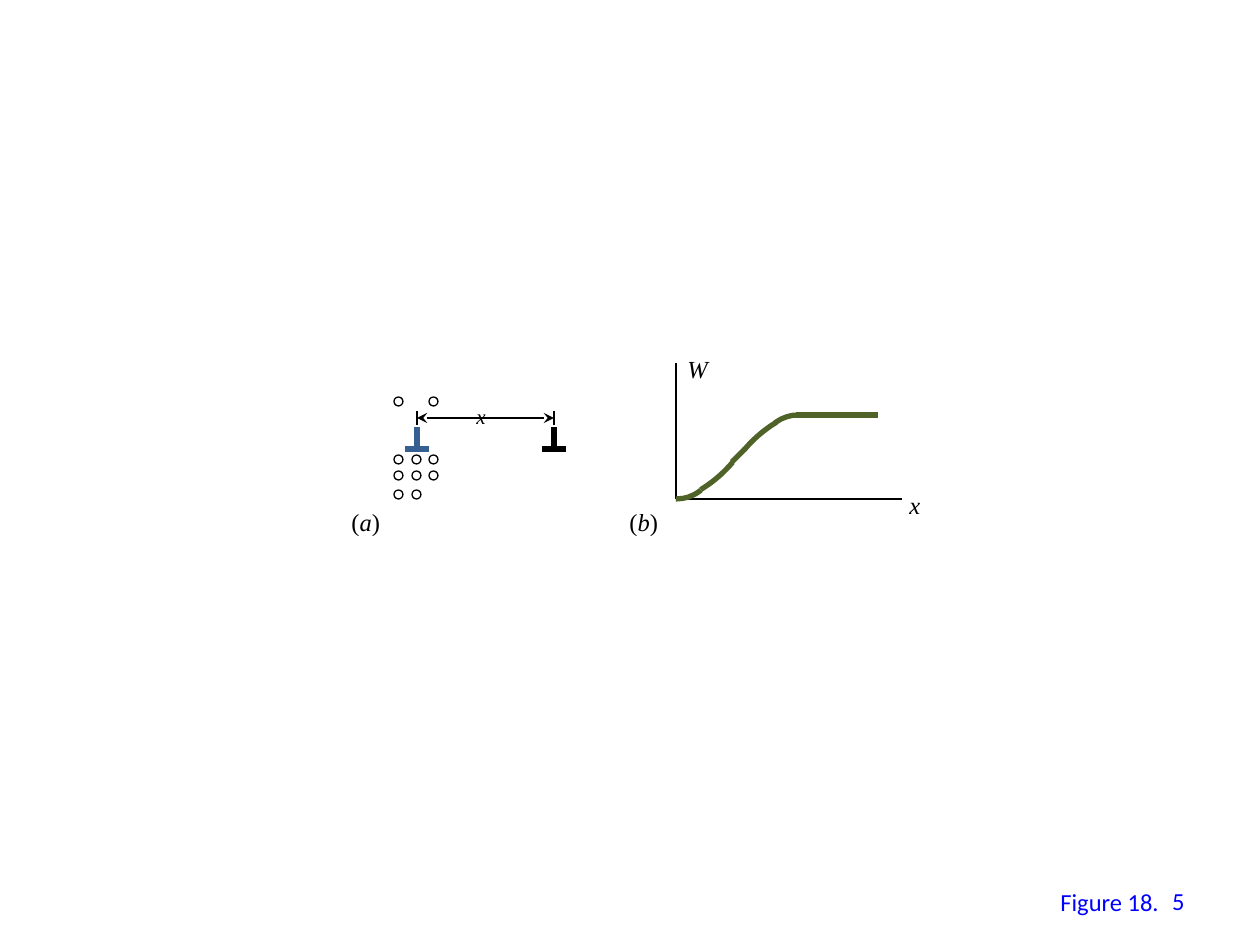
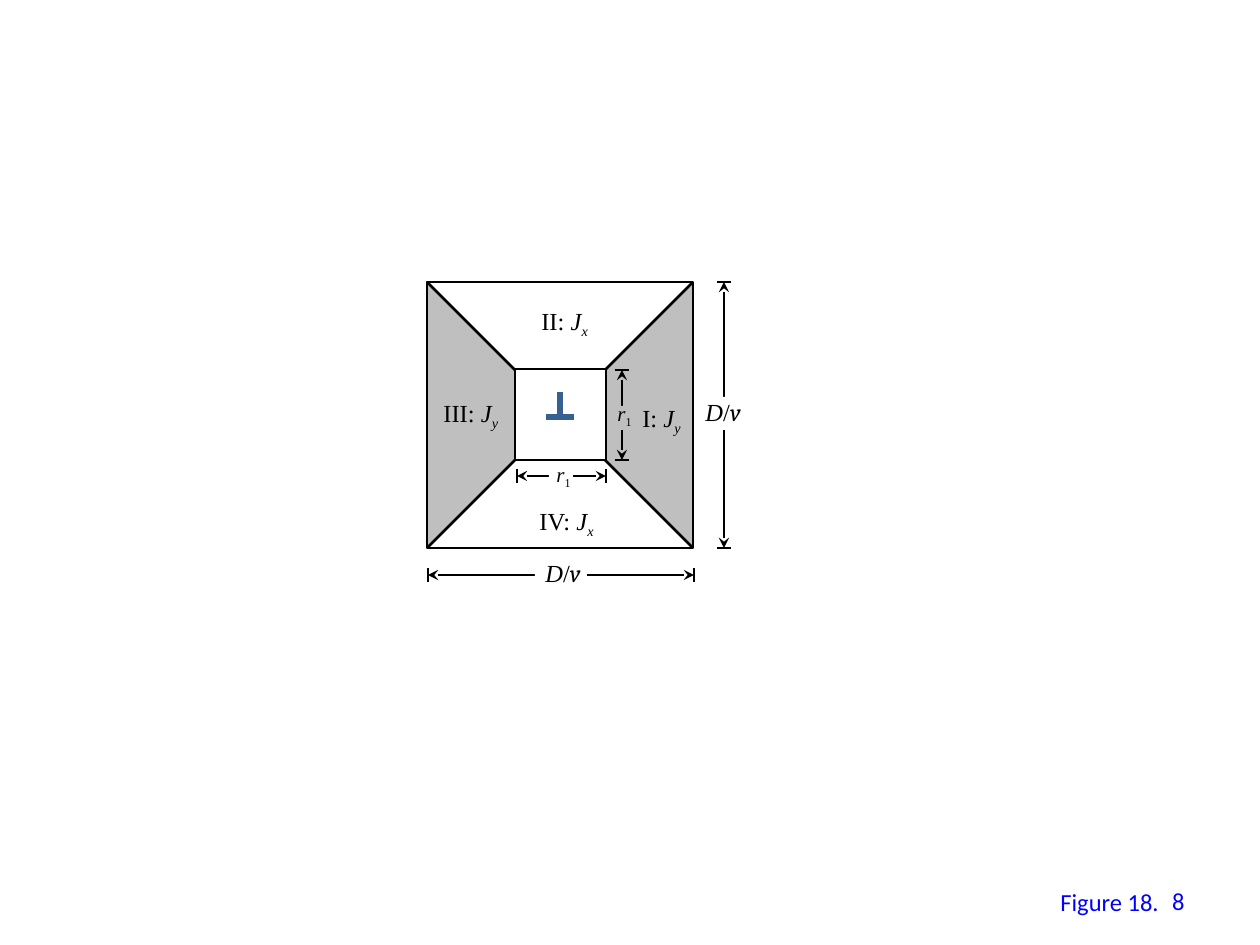
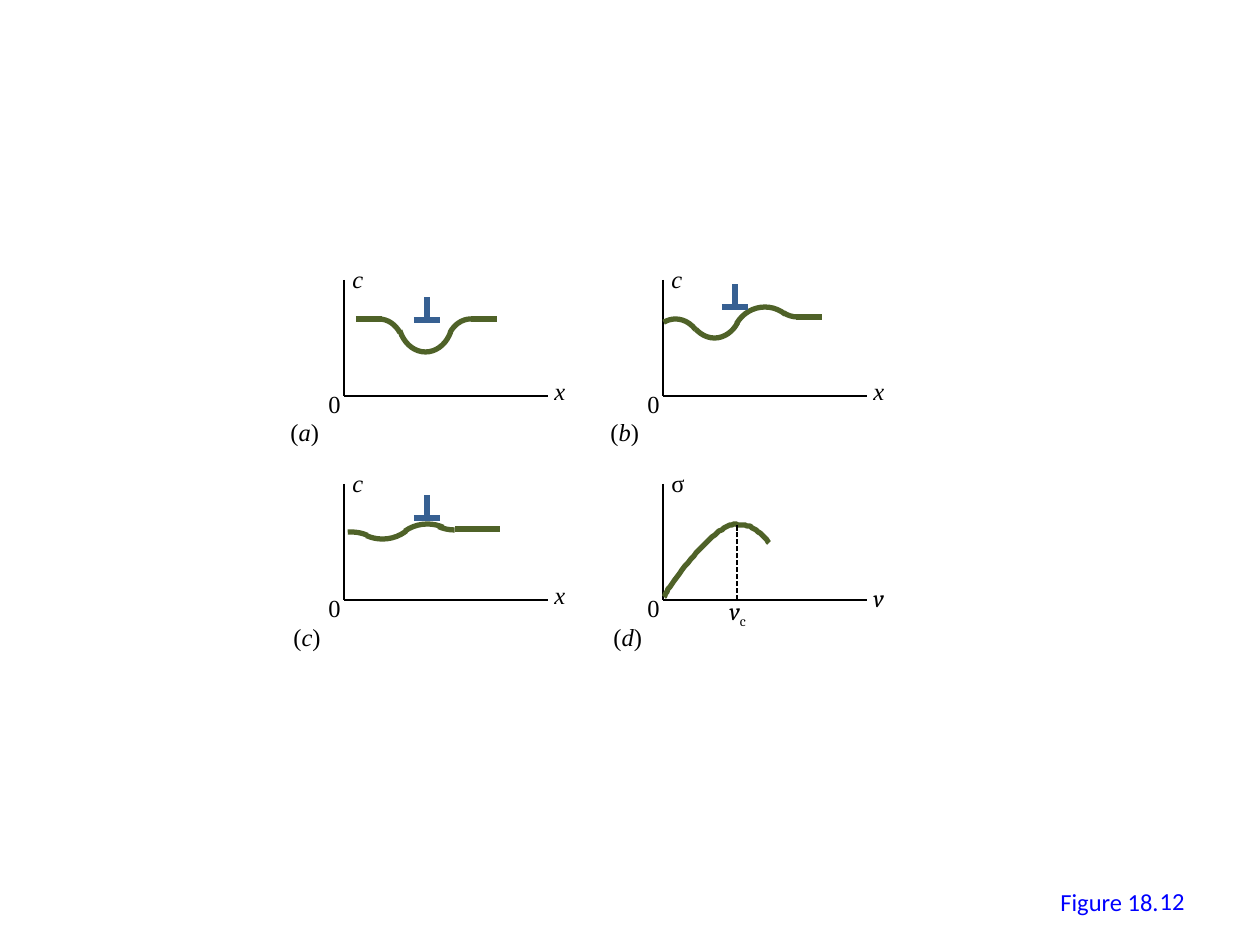
from pptx import Presentation
from pptx import util as u
from pptx.dml.color import RGBColor
from pptx.enum import dml, shapes, text
from pptx.oxml import ns, xmlchemy

# Shared style; lengths are px at 126 to the inch
PX = 914400 // 126
BLACK, WHITE, GREY = "000000", "FFFFFF", "BFBFBF"
GREEN, BLUE, FOOTER = "4F6228", "376092", "0000FF"
SERIF, SANS, SYMBOL = "Times New Roman", "Calibri", "Cambria"
CURVE, AXIS, THIN = 3, 1.5, 1

# Runs are (text, flags): i italic, s subscript, v symbol font
X, C, W = [("x", "i")], [("c", "i")], [("W", "i")]
V, SIGMA, ZERO = [("v", "iv")], [("σ", "")], [("0", "")]
V_C = [("v", "iv"), ("c", "sv")]
R_1 = [("r", "i"), ("1", "s")]
D_V = [("D", "i"), ("/", ""), ("v", "iv")]


def flux(zone, axis):
    return [(zone + ": ", ""), ("J", "i"), (axis, "is")]


def caption(letter):
    return [("(", ""), (letter, "i"), (")", "")]


# Slide 1: left, top, width, height, start and end angle, rotation
WORK_ARCS = [
    (634, 396, 86, 103, 60.6, 91.2, 0),
    (755, 415, 86, 103, 242, 271.2, 0),
    (713, 420, 165, 103, 60.9, 106.4, 142.1),
    (599, 389, 165, 103, 60.9, 106.4, 322.1),
]
WORK_LINES = [(796, 415, 878, 415), (732, 462, 745, 449)]
WORK_LABELS = [
    (X, 897, 484, 43), (W, 675, 348, 53),
    (caption("b"), 617, 501, 54), (caption("a"), 339, 501, 54),
]
ATOM_COLUMNS = (394, 412, 429)
ATOM_ROWS = {397: (0, 2), 455: (0, 1, 2), 471: (0, 1, 2), 490: (0, 1)}

# Slide 2: squares are left, top, side
OUTER, INNER = (427, 282, 266), (515, 369, 91)
# Dimension ends, mask box, mask colour, label, label box, label size
DIMENSIONS = [
    ((517, 476, 606, 476), (549, 467, 24, 19), WHITE, (R_1, 544, 455, 45, 12)),
    ((622, 370, 622, 460), (614, 406, 24, 24), GREY, (R_1, 605, 394, 45, 12)),
    ((428, 575, 694, 575), (535, 564, 52, 19), WHITE, (D_V, 533, 552, 69)),
    ((724, 282, 724, 548), (715, 397, 19, 33), WHITE, (D_V, 693, 391, 69)),
]
ZONE_LABELS = [
    (flux("I", "y"), 630, 397, 66), (flux("IV", "x"), 527, 500, 81),
    (flux("II", "x"), 529, 300, 73), (flux("III", "y"), 431, 392, 82),
]

# Slide 3: the four panels
PANELS = [
    dict(origin=(344, 396), y=(C, 43), x=(X, 43, -26),
         caption=(caption("a"), 278, 411, 54), dislocation=(427, 320),
         lines=[(471, 319, 497, 319), (356, 319, 382, 319)],
         arcs=[(398, 285, 55, 67, 28.1, 155, 0),
               (446, 319, 50, 60, 217.8, 271.3, 0),
               (354, 319, 50, 60, 268.7, 322.2, 0)]),
    dict(origin=(663, 396), y=(C, 43), x=(X, 43, -26),
         caption=(caption("b"), 598, 411, 54), dislocation=(735, 307),
         lines=[(796, 317, 822, 317)],
         arcs=[(687, 271, 55, 67, 37.7, 127, 0),
               (648, 319, 55, 67, 248.6, 311.5, 0),
               (732, 307, 66, 68, 211.5, 307, 0),
               (770, 256, 55, 61, 91.4, 117.3, 0)]),
    dict(origin=(344, 600), y=(C, 43), x=(X, 43, -26),
         caption=(caption("c"), 281, 616, 53), dislocation=(427, 518),
         lines=[(455, 529, 500, 529)],
         arcs=[(391, 524, 73, 67, 229.3, 298.1, 0),
               (346, 472, 73, 67, 46.4, 118.1, 0),
               (315, 532, 73, 67, 263.7, 298.1, 0),
               (418, 463, 73, 67, 89.8, 118.1, 0)]),
    dict(origin=(663, 600), y=(SIGMA, 39), x=(V, 44, -23),
         caption=(caption("d"), 601, 616, 54), dislocation=None,
         lines=[], arcs=[]),
]
STRESS_CURVE = [(769, 543), (760, 533), (751, 527), (742, 525), (730, 525),
                (717, 533), (702, 547), (685, 566), (670, 587), (664, 597)]
PEAK = (737, 525)


# Drawing helpers
def px(*lengths):
    return [round(length * PX) for length in lengths]


def colour(value):
    return RGBColor.from_string(value)


def paint(shape, fill=None, line=None, width=THIN):
    shape.shadow.inherit = False
    if fill:
        shape.fill.solid()
        shape.fill.fore_color.rgb = colour(fill)
    else:
        shape.fill.background()
    if line:
        shape.line.color.rgb = colour(line)
        shape.line.width = u.Pt(width)
    else:
        shape.line.fill.background()


def add_shape(slide, kind, box, **style):
    shape = slide.shapes.add_shape(kind, *px(*box))
    paint(shape, **style)
    return shape


def add_outline(slide, points, close, **style):
    builder = slide.shapes.build_freeform(*points[0], scale=PX)
    builder.add_line_segments(points[1:], close=close)
    paint(builder.convert_to_shape(), **style)


def add_line(slide, ends, shade=BLACK, width=THIN, dash=None, arrows=False):
    connector = slide.shapes.add_connector(
        shapes.MSO_CONNECTOR.STRAIGHT, *px(*ends))
    connector.line.color.rgb = colour(shade)
    connector.line.width = u.Pt(width)
    if dash:
        connector.line.dash_style = dash
    properties = connector._element.spPr
    if arrows:
        outline = properties.find(ns.qn("a:ln"))
        for end in ("a:headEnd", "a:tailEnd"):
            arrow = xmlchemy.OxmlElement(end)
            arrow.set("type", "stealth")
            outline.append(arrow)
    properties.append(xmlchemy.OxmlElement("a:effectLst"))


def add_arc(slide, left, top, width, height, start, end, rotation):
    arc = add_shape(slide, shapes.MSO_SHAPE.ARC, (left, top, width, height),
                    line=GREEN, width=CURVE)
    # Arc adjustments count 0.6 to the degree
    arc.adjustments[0], arc.adjustments[1] = start * 0.6, end * 0.6
    arc.rotation = rotation


def add_label(slide, runs, left, top, width, size=14, font=SERIF, shade=BLACK):
    height = 43 if size == 14 else 38
    box = slide.shapes.add_textbox(*px(left, top, width, height))
    frame = box.text_frame
    frame.word_wrap = False
    frame.auto_size = text.MSO_AUTO_SIZE.SHAPE_TO_FIT_TEXT
    paragraph = frame.paragraphs[0]
    paragraph.font.size = u.Pt(size)
    paragraph.font.name = font
    paragraph.font.color.rgb = colour(shade)
    for words, flags in runs:
        run = paragraph.add_run()
        run.text = words
        if "i" in flags:
            run.font.italic = True
        if "v" in flags:
            run.font.name = SYMBOL
        if "s" in flags:
            run._r.get_or_add_rPr().set("baseline", "-25000")
    return box


def add_axes(slide, x, y, width, height):
    add_line(slide, (x + width, y, x, y), width=AXIS)
    add_line(slide, (x, y - height, x, y), width=AXIS)


def add_curve(slide, arcs, lines):
    for arc in arcs:
        add_arc(slide, *arc)
    for ends in lines:
        add_line(slide, ends, GREEN, CURVE)


def add_dislocation(slide, x, y, half=13, height=23, shade=BLUE, width=CURVE):
    add_line(slide, (x - half, y, x + half, y), shade, width)
    add_line(slide, (x, y, x, y - height), shade, width)


def add_dimension(slide, x1, y1, x2, y2):
    add_line(slide, (x1, y1, x2, y2), arrows=True)
    across, down = (0, 7) if y1 == y2 else (7, 0)
    for x, y in ((x1, y1), (x2, y2)):
        add_line(slide, (x - across, y - down, x + across, y + down))


def smooth(points, steps=6):
    """Sample a Catmull-Rom curve through the points."""
    padded = [points[0], *points, points[-1]]
    result = [points[0]]
    for a, b, c, d in zip(padded, padded[1:], padded[2:], padded[3:]):
        for step in range(1, steps + 1):
            t = step / steps
            result.append(tuple(
                (2 * q + (r - p) * t + (2 * p - 5 * q + 4 * r - s) * t ** 2
                 + (3 * q - p - 3 * r + s) * t ** 3) / 2
                for p, q, r, s in zip(a, b, c, d)))
    return result


def add_figure_slide(presentation, number):
    slide = presentation.slides.add_slide(presentation.slide_layouts[6])
    add_label(slide, [("Figure 18.", "")], 1048, 881, 125,
              font=SANS, shade=FOOTER)
    box = add_label(slide, [(str(number), "")], 903, 876, 294,
                    font=SANS, shade=FOOTER)
    box.height = px(50)[0]
    frame = box.text_frame
    frame.word_wrap = True
    frame.auto_size = text.MSO_AUTO_SIZE.NONE
    frame.vertical_anchor = text.MSO_ANCHOR.MIDDLE
    frame.paragraphs[0].alignment = text.PP_ALIGN.RIGHT
    return slide


# Slides
def build_work_slide(presentation):
    slide = add_figure_slide(presentation, 5)
    add_axes(slide, 676, 499, 226, 136)
    add_curve(slide, WORK_ARCS, WORK_LINES)
    for x, shade in ((554, BLACK), (417, BLUE)):
        add_dislocation(slide, x, 449, 12, 22, shade)
    for top, columns in ATOM_ROWS.items():
        for column in columns:
            add_shape(slide, shapes.MSO_SHAPE.OVAL,
                      (ATOM_COLUMNS[column], top, 9, 9),
                      line=BLACK, width=0.75)
    add_dimension(slide, 417, 418, 554, 418)
    add_label(slide, X, 464, 397, 40, 12)
    for label in WORK_LABELS:
        add_label(slide, *label)


def build_flux_slide(presentation):
    slide = add_figure_slide(presentation, 8)
    left, top, side = OUTER
    right, bottom = left + side, top + side
    inner_left, inner_top, inner_side = INNER
    inner_right, inner_bottom = inner_left + inner_side, inner_top + inner_side
    for x, inner_x in ((right, inner_right), (left, inner_left)):
        add_outline(slide, [(x, top), (inner_x, inner_top),
                            (inner_x, inner_bottom), (x, bottom)],
                    True, fill=GREY)
    add_line(slide, (left, bottom, right, top), width=AXIS)
    add_line(slide, (right, bottom, left, top), width=AXIS)
    for (x, y, size), fill in ((OUTER, None), (INNER, WHITE)):
        add_shape(slide, shapes.MSO_SHAPE.RECTANGLE, (x, y, size, size),
                  fill=fill, line=BLACK, width=AXIS)
    for ends, mask, shade, label in DIMENSIONS:
        add_dimension(slide, *ends)
        add_shape(slide, shapes.MSO_SHAPE.RECTANGLE, mask, fill=shade)
        add_label(slide, *label)
    for label in ZONE_LABELS:
        add_label(slide, *label)
    add_dislocation(slide, 560, 417, 14, 25, width=3.5)


def build_drag_slide(presentation):
    slide = add_figure_slide(presentation, 12)
    for panel in PANELS:
        x, y = panel["origin"]
        add_axes(slide, x, y, 204, 116)
        runs, width = panel["y"]
        add_label(slide, runs, x - 4, y - 138, width)
        add_label(slide, ZERO, x - 28, y - 13, 38)
        runs, width, rise = panel["x"]
        add_label(slide, runs, x + 198, y + rise, width)
        add_label(slide, *panel["caption"])
        add_curve(slide, panel["arcs"], panel["lines"])
        if panel["dislocation"]:
            add_dislocation(slide, *panel["dislocation"])
    add_outline(slide, smooth(STRESS_CURVE), False, line=GREEN, width=CURVE)
    peak_x, peak_y = PEAK
    add_line(slide, (peak_x, 600, peak_x, peak_y),
             dash=dml.MSO_LINE.SQUARE_DOT)
    add_label(slide, V_C, 717, 590, 50)


def main():
    presentation = Presentation()
    presentation.slide_width, presentation.slide_height = px(1260, 945)
    build_work_slide(presentation)
    build_flux_slide(presentation)
    build_drag_slide(presentation)
    presentation.save("out.pptx")


if __name__ == "__main__":
    main()
